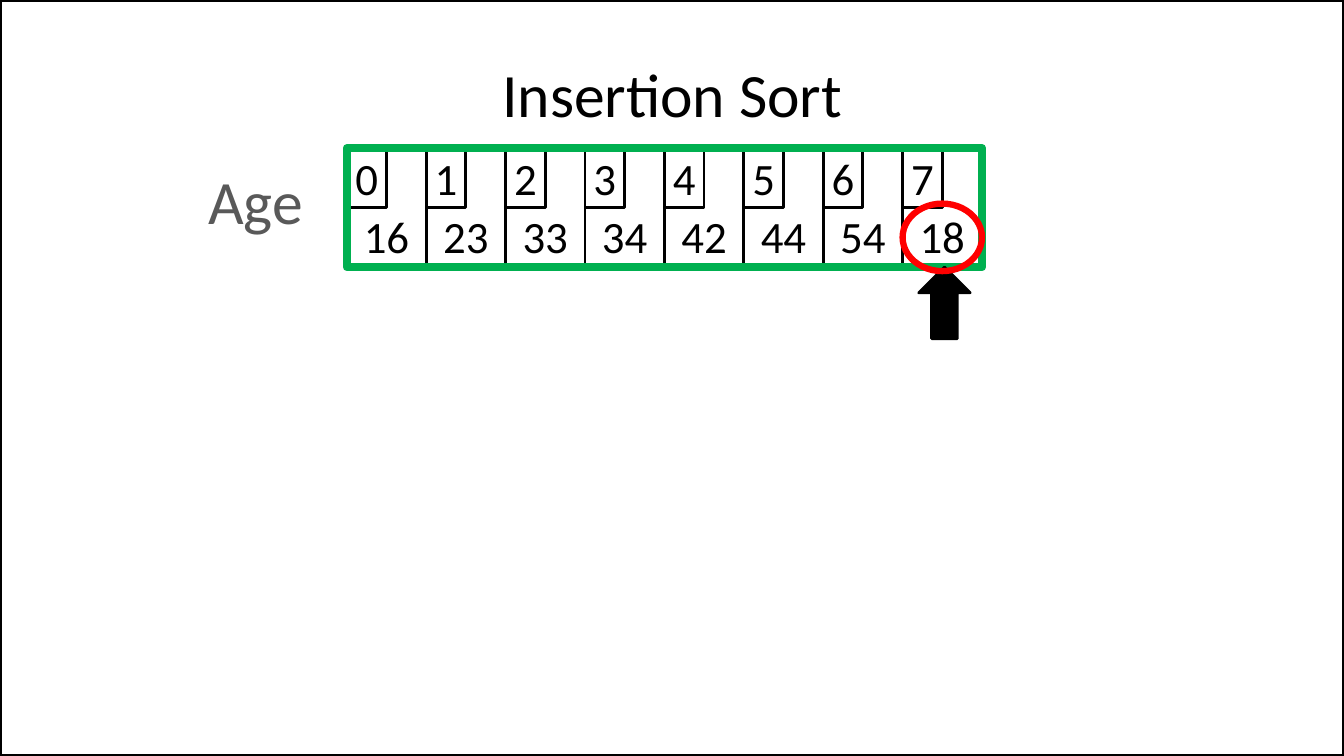
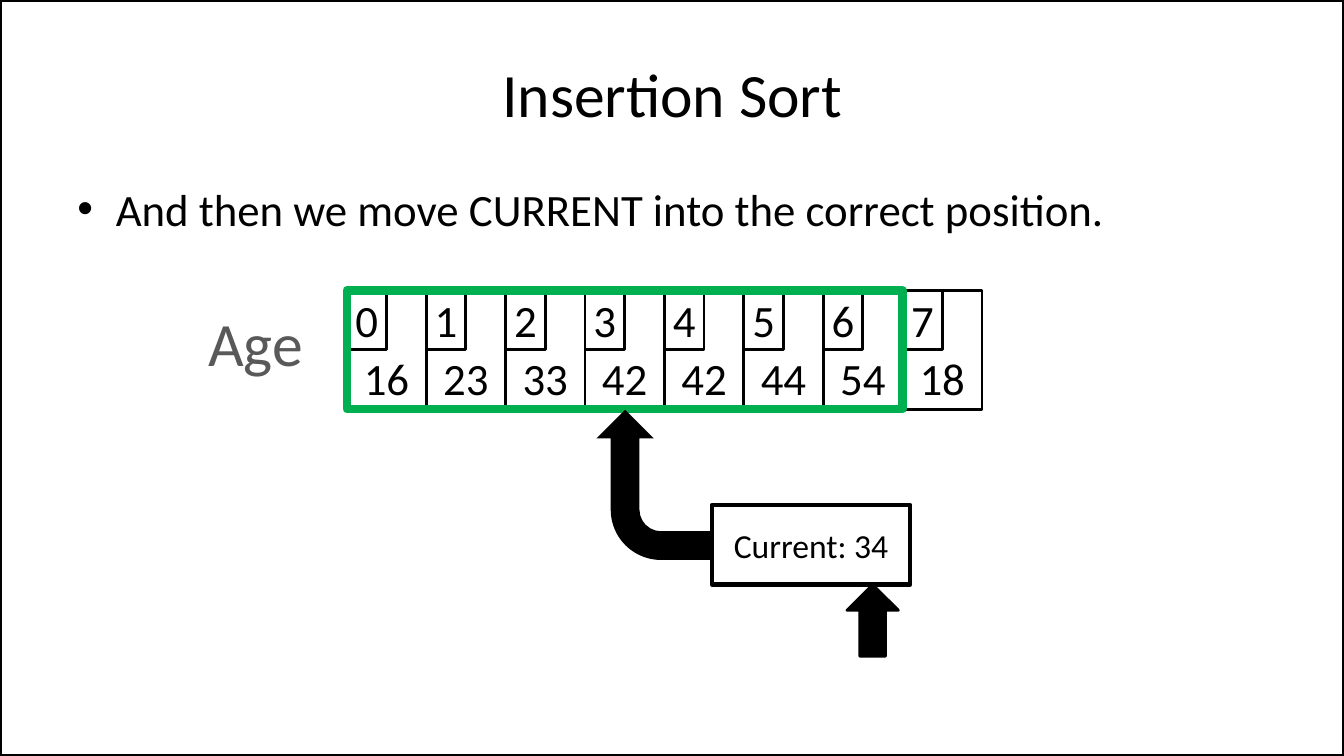
from dataclasses import dataclass

from lxml import etree
from pptx import Presentation
from pptx.dml.color import RGBColor
from pptx.enum import shapes, text
from pptx.oxml import ns
from pptx.util import Inches, Pt


@dataclass(frozen=True)
class Theme:
    font: str = "Calibri"
    ink: str = "000000"
    label: str = "595959"
    sorted_part: str = "00B050"
    highlight: str = "FF0000"
    title_size: int = 44
    body_size: int = 32
    note_size: int = 24
    width: float = 13.33
    height: float = 7.5


THEME = Theme()
SHAPE = shapes.MSO_SHAPE
ANCHOR = text.MSO_ANCHOR
ALIGN = text.PP_ALIGN

# Array geometry
ARRAY_LEFT = 3.44
CELL_WIDTH = 6.3 / 8
CELL_HEIGHT = 1.18


def write(shape, words, size, color=THEME.ink, anchor=ANCHOR.MIDDLE,
          align=ALIGN.CENTER, wrap=True):
    """Put one styled paragraph into a shape and return it."""
    frame = shape.text_frame
    frame.word_wrap = wrap
    frame.vertical_anchor = anchor
    para = frame.paragraphs[0]
    para.text = words
    para.alignment = align
    para.font.name = THEME.font
    para.font.size = Pt(size)
    para.font.color.rgb = RGBColor.from_string(color)
    return para


def add_label(page, box, words, size, **style):
    label = page.shapes.add_textbox(*map(Inches, box))
    return write(label, words, size, **style)


def add_figure(page, kind, box, line=None, weight=2, fill=None):
    """Add a preset shape, outlined and filled only where asked."""
    figure = page.shapes.add_shape(kind, *map(Inches, box))
    figure.shadow.inherit = False
    if fill:
        figure.fill.solid()
        figure.fill.fore_color.rgb = RGBColor.from_string(fill)
    else:
        figure.fill.background()
    if line:
        figure.line.color.rgb = RGBColor.from_string(line)
        figure.line.width = Pt(weight)
    else:
        figure.line.fill.background()
    return figure


def add_page(deck):
    """Start a slide with the shared border and title."""
    page = deck.slides.add_slide(deck.slide_layouts[6])
    add_figure(page, SHAPE.RECTANGLE, (0, 0, THEME.width, THEME.height),
               THEME.ink, 3)
    add_label(page, (0.67, 0.3, 12, 1.25), "Insertion Sort", THEME.title_size)
    return page


def add_bullet(page, box, words):
    para = add_label(page, box, words, THEME.body_size,
                     anchor=ANCHOR.TOP, align=ALIGN.LEFT)
    properties = para._p.get_or_add_pPr()
    properties.set("marL", str(Inches(0.38)))
    properties.set("indent", str(-Inches(0.38)))
    bullet_font = etree.SubElement(properties, ns.qn("a:buFont"))
    bullet_font.set("typeface", "Arial")
    etree.SubElement(properties, ns.qn("a:buChar")).set("char", "•")
    # The schema wants the bullet before the default run properties
    properties.append(properties.find(ns.qn("a:defRPr")))


def cell_left(index):
    return ARRAY_LEFT + index * CELL_WIDTH


def add_array(page, top, values, sorted_count):
    """Draw the cells, their index tags, the name and the sorted frame."""
    for index, value in enumerate(values):
        cell = add_figure(page, SHAPE.RECTANGLE,
                          (cell_left(index), top, CELL_WIDTH, CELL_HEIGHT),
                          THEME.ink)
        write(cell, str(value), THEME.body_size, anchor=ANCHOR.BOTTOM)
    for index in range(len(values)):
        tag = add_figure(page, SHAPE.RECTANGLE,
                         (cell_left(index), top,
                          CELL_WIDTH / 2, CELL_HEIGHT / 2), THEME.ink)
        write(tag, str(index), THEME.body_size, wrap=False)
    add_label(page, (1.95, top + 0.1, 1.17, 0.84), "Age", THEME.title_size,
              color=THEME.label, anchor=ANCHOR.TOP, wrap=False)
    add_figure(page, SHAPE.RECTANGLE,
               (ARRAY_LEFT, top, sorted_count * CELL_WIDTH, CELL_HEIGHT),
               THEME.sorted_part, 6)


def add_pointer(page, left, top):
    add_figure(page, SHAPE.UP_ARROW, (left, top, 0.51, 0.71),
               THEME.ink, fill=THEME.ink)


def add_current(page, box, value):
    """Draw the box that holds CURRENT, with its pointer and bent arrow."""
    left, top, width, height = box
    add_pointer(page, left + 1.34, top + height)
    holder = add_figure(page, SHAPE.RECTANGLE, box, THEME.ink, 3)
    write(holder, f"Current: {value}", THEME.note_size)
    arrow = add_figure(page, SHAPE.BENT_ARROW,
                       (left - 1.32, top - 0.77, 1.49, 1.14), fill=THEME.ink)
    arrow.rotation = 270


def build_sorted_page(deck):
    page = add_page(deck)
    top = 1.47
    values = [16, 23, 33, 34, 42, 44, 54, 18]
    last = len(values) - 1
    add_array(page, top, values, len(values))
    add_pointer(page, cell_left(last) + 0.16, top + CELL_HEIGHT)
    add_figure(page, SHAPE.OVAL,
               (cell_left(last), top + 0.55, CELL_WIDTH, 0.67),
               THEME.highlight, 4.5)


def build_insert_page(deck):
    page = add_page(deck)
    add_bullet(page, (0.67, 1.75, 12, 4.95),
               "And then we move CURRENT into the correct position.")
    add_array(page, 2.88, [16, 23, 33, 42, 42, 44, 54, 18], 7)
    add_current(page, (7.06, 5.01, 1.97, 0.79), 34)


def main():
    deck = Presentation()
    deck.slide_width = Inches(THEME.width)
    deck.slide_height = Inches(THEME.height)
    build_sorted_page(deck)
    build_insert_page(deck)
    deck.save("out.pptx")


if __name__ == "__main__":
    main()
